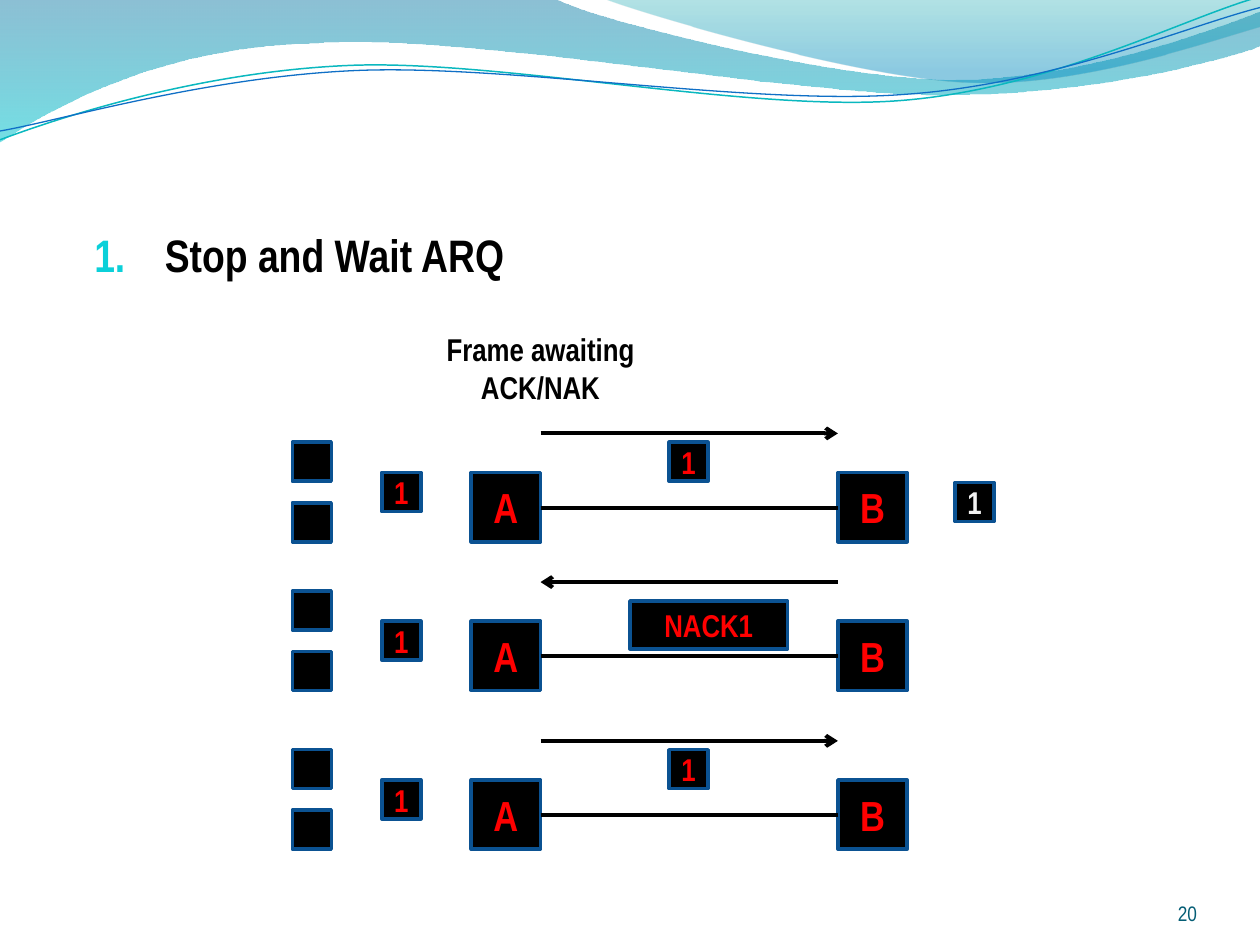
"""Build the Stop and Wait ARQ slide: three frame exchanges between stations A and B."""
from dataclasses import dataclass

from lxml.etree import SubElement
from pptx import Presentation
from pptx.dml.color import RGBColor
from pptx.enum.shapes import MSO_CONNECTOR as Connector, MSO_SHAPE as Shape
from pptx.enum.text import MSO_ANCHOR as Anchor, PP_ALIGN as Align
from pptx.oxml.ns import qn
from pptx.util import Inches, Pt


@dataclass(frozen=True)
class Theme:
    font: str = "Arial Narrow"
    ink: str = "000000"
    red: str = "FF0000"
    pale: str = "F2F2F2"
    border: str = "0B5292"
    number: str = "045D75"
    bullet: str = "0BD0D9"
    title_size: int = 26
    station_size: int = 24
    frame_size: int = 18
    number_size: int = 12
    border_width: float = 2
    line_width: float = 2.25


THEME = Theme()
TITLE = "Stop and Wait ARQ"
CAPTION = ["Frame awaiting", "ACK/NAK"]
PAGE_NUMBER = "20"

EXCHANGES = [
    {"top": 3.51, "message": "1", "to_b": True},
    {"top": 4.69, "message": "NACK1", "to_b": False},
    {"top": 5.95, "message": "1", "to_b": True},
]
MESSAGE_BOXES = {"1": (5.31, 0, 0.31, 0.31), "NACK1": (5, 0.08, 1.25, 0.38)}
COLUMNS = {"queue": 2.32, "pending": 3.03, "A": 3.74, "B": 6.65, "received": 7.58}
FRAME, STATION, STEP = 0.31, 0.55, 0.24
LINK_DROP, ARROW_RISE = 0.52, 0.07

BANDS = [
    {"start": (0, 0), "stops": [(0, "0074A1", 45), (1, "00C6CF", 55)], "segments": [
        [(4.4, -0.01)],
        [(4.76, 0.17), (6.64, 0.63), (7.58, 0.63)],
        [(8.53, 0.63), (9.58, 0.26), (10, 0.09)],
        [(10.01, 0.36)],
        [(9.83, 0.44), (8.7, 0.76), (7.46, 0.75)],
        [(6.22, 0.75), (3.82, 0.28), (2.57, 0.34)],
        [(1.29, 0.36), (0.46, 0.83), (-0.01, 1.13)]]},
    {"start": (4.79, -0.01), "stops": [(0, "00A1A9", 30), (0.8, "008BBF", 45)], "segments": [
        [(5.09, 0.11), (6.82, 0.62), (7.69, 0.65)],
        [(8.56, 0.69), (9.61, 0.32), (10, 0.21)],
        [(10, 0)]]},
]
WAVES = [
    {"start": (0, 1.11), "color": "0AB8BF", "width": 0.85, "segments": [
        [(0.48, 0.93), (1.58, 0.57), (2.77, 0.52)],
        [(3.95, 0.47), (5.93, 0.89), (7.13, 0.8)],
        [(8.33, 0.71), (9.38, 0.15), (9.98, -0.02)]]},
    {"start": (0, 1.04), "color": "0F6FC6", "width": 0.75, "segments": [
        [(0.47, 0.96), (1.64, 0.61), (2.83, 0.56)],
        [(4.03, 0.51), (5.97, 0.84), (7.17, 0.75)],
        [(8.36, 0.67), (9.41, 0.21), (10, 0.06)]]},
]


def rgb(color):
    return RGBColor.from_string(color)


def add_curve(page, start, segments, close):
    """Add an outline of straight (one point) and cubic (three point) segments."""
    builder = page.shapes.build_freeform(*map(Inches, start))
    corners = [tuple(map(Inches, corner)) for segment in segments for corner in segment]
    builder.add_line_segments(corners, close=close)
    curve = builder.convert_to_shape()
    curve.shadow.inherit = False
    nodes = iter(list(curve.element.spPr.iter(qn("a:lnTo"))))
    for segment in segments:
        head, *others = [next(nodes) for _ in segment]
        if others:
            cubic = head.makeelement(qn("a:cubicBezTo"))
            head.addprevious(cubic)
            for node in (head, *others):
                cubic.append(node[0])
                node.getparent().remove(node)
    return curve


def add_band(page, start, segments, stops):
    """Add a translucent band with a vertical gradient."""
    band = add_curve(page, start, segments, True)
    band.line.fill.background()
    band.fill.gradient()
    band.fill.gradient_angle = 270
    for stop, (position, color, _) in zip(band.fill.gradient_stops, stops):
        stop.position = position
        stop.color.rgb = rgb(color)
    for node, (_, _, opacity) in zip(band.element.spPr.iter(qn("a:srgbClr")), stops):
        SubElement(node, qn("a:alpha"), val=str(opacity * 1000))


def add_wave(page, start, segments, color, width):
    """Add a thin wavy line."""
    wave = add_curve(page, start, segments, False)
    wave.fill.background()
    wave.line.color.rgb = rgb(color)
    wave.line.width = Pt(width)


def write(frame, lines, size, color, align, bold=True):
    """Fill a text frame with equally styled paragraphs."""
    frame.text = "\n".join(lines)
    for para in frame.paragraphs:
        para.alignment = align
        para.font.name, para.font.size, para.font.bold = THEME.font, Pt(size), bold
        para.font.color.rgb = rgb(color)


def add_text(page, place, *style, wrap=True, **options):
    """Add a text box and return its frame."""
    frame = page.shapes.add_textbox(*map(Inches, place)).text_frame
    frame.word_wrap = wrap
    write(frame, *style, **options)
    return frame


def add_box(page, place, text="", size=THEME.frame_size, color=THEME.red):
    """Add a black box with an optional centred label."""
    box = page.shapes.add_shape(Shape.RECTANGLE, *map(Inches, place))
    box.shadow.inherit = False
    box.fill.solid()
    box.fill.fore_color.rgb = rgb(THEME.ink)
    box.line.color.rgb = rgb(THEME.border)
    box.line.width = Pt(THEME.border_width)
    if text:
        frame = box.text_frame
        frame.word_wrap = False
        frame.vertical_anchor = Anchor.MIDDLE
        write(frame, [text], size, color, Align.CENTER)


def add_line(page, start, end, height, arrow=False):
    """Add a horizontal line, with an arrowhead at its end if asked."""
    line = page.shapes.add_connector(Connector.STRAIGHT, *map(Inches, (start, height, end, height)))
    line.line.color.rgb = rgb(THEME.ink)
    line.line.width = Pt(THEME.line_width)
    if arrow:
        SubElement(line.element.spPr.find(qn("a:ln")), qn("a:tailEnd"), type="arrow")
    SubElement(line.element.spPr, qn("a:effectLst"))


def add_exchange(page, top, message, to_b):
    """Add one row: queued frames, stations, link, and message under its arrow."""
    for row in (0, 2):
        add_box(page, (COLUMNS["queue"], top + row * STEP, FRAME, FRAME))
    add_box(page, (COLUMNS["pending"], top + STEP, FRAME, FRAME), "1")
    left, drop, width, height = MESSAGE_BOXES[message]
    add_box(page, (left, top + drop, width, height), message)
    for name in "AB":
        add_box(page, (COLUMNS[name], top + STEP, STATION, STATION), name, THEME.station_size)
    ends = (COLUMNS["A"] + STATION, COLUMNS["B"])
    add_line(page, *ends, top + LINK_DROP)
    add_line(page, *(ends if to_b else ends[::-1]), top - ARROW_RISE, arrow=True)


def main():
    deck = Presentation()
    deck.slide_width, deck.slide_height = Inches(10), Inches(7.5)
    page = deck.slides.add_slide(deck.slide_layouts[6])
    for band in BANDS:
        add_band(page, **band)
    for wave in WAVES:
        add_wave(page, **wave)

    title = add_text(page, (0.5, 1.75, 9, 0.74), [TITLE], THEME.title_size, THEME.ink, Align.LEFT)
    para = title.paragraphs[0]
    para.space_before = Pt(0.2 * THEME.title_size)
    layout = para._p.get_or_add_pPr()
    layout.set("marL", str(Inches(0.71)))
    layout.set("indent", str(Inches(-0.56)))
    defaults = layout.find(qn("a:defRPr"))
    tint = SubElement(layout, qn("a:buClr"))
    SubElement(tint, qn("a:srgbClr"), val=THEME.bullet)
    SubElement(layout, qn("a:buFont"), typeface=THEME.font)
    SubElement(layout, qn("a:buAutoNum"), type="arabicPeriod")
    layout.append(defaults)

    number = add_text(page, (8.67, 6.95, 0.83, 0.4), [PAGE_NUMBER], THEME.number_size,
                      THEME.number, Align.RIGHT, bold=False)
    number.vertical_anchor = Anchor.BOTTOM
    number.margin_left = number.margin_right = number.margin_top = number.margin_bottom = 0
    add_text(page, (3.19, 2.57, 2.2, 0.71), CAPTION, THEME.frame_size, THEME.ink,
             Align.CENTER, wrap=False)
    for exchange in EXCHANGES:
        add_exchange(page, **exchange)
    add_box(page, (COLUMNS["received"], 3.83, FRAME, FRAME), "1", color=THEME.pale)
    deck.save("out.pptx")


if __name__ == "__main__":
    main()
